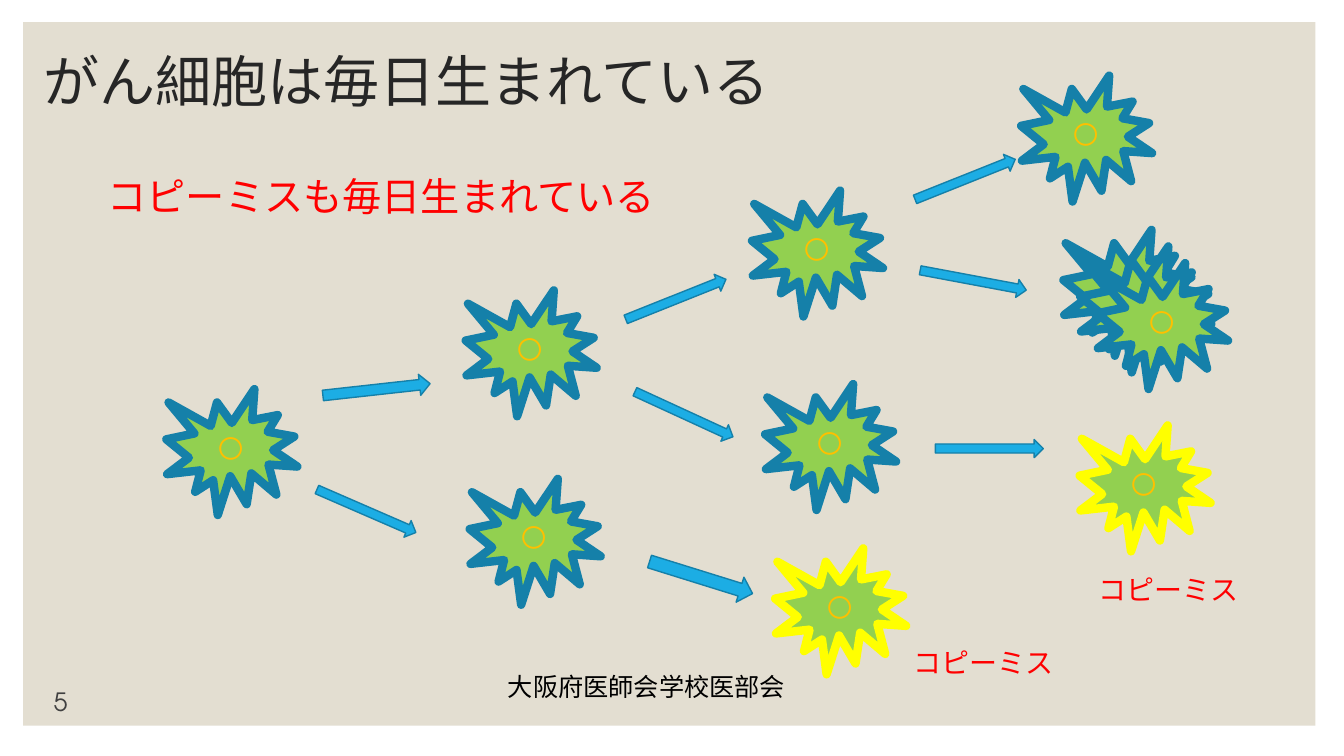
"""Build the slide that shows copy errors arising as cells divide."""
import dataclasses

import pptx
import pptx.dml.color
import pptx.enum.shapes
import pptx.enum.text
import pptx.util

SHAPE = pptx.enum.shapes.MSO_SHAPE
ALIGN = pptx.enum.text.PP_ALIGN
ANCHOR = pptx.enum.text.MSO_ANCHOR
AUTO_SIZE = pptx.enum.text.MSO_AUTO_SIZE

SLIDE_WIDTH, SLIDE_HEIGHT = pptx.util.Inches(13.33), pptx.util.Inches(7.5)
COLUMNS, ROWS = 40, 30
CELL_WIDTH, CELL_HEIGHT = 3.9, 5
ARROW_LENGTH = 3.21
STACK_SIZE, STACK_START, STACK_STEP = 3, (31.65, 9.12), (0.5, 0.66)

HEALTHY_CELLS = [
    (4.95, 15.44),
    (13.86, 11.52), (13.98, 19),
    (22.38, 7.56), (22.77, 15.24),
    (30.39, 3),
]
MISCOPIED_CELLS = [(23.07, 21.76), (32.13, 16.88)]
ARROWS = [
    (9.6, 15.04, 0.84, -6.3), (9.3, 19.92, 0.72, 23.5),
    (18.51, 11.52, 0.72, -21.8), (18.75, 16.08, 0.72, 24.7),
    (19.26, 22.4, 1.04, 17.3),
    (27.12, 6.76, 0.72, -21.8), (27.36, 10.76, 0.72, 10.6),
    (27.84, 17.44, 0.72, 0),
]
MISCOPY_LABELS = [(32.4, 22.52), (26.88, 25.4)]


@dataclasses.dataclass(frozen=True)
class Theme:
    """Colours, type sizes and line widths of the slide."""
    font: str = "TeX Gyre Adventor"
    panel: str = "E3DED1"
    title: str = "262626"
    number: str = "404040"
    text: str = "000000"
    alert: str = "FF0000"
    cell: str = "92D050"
    nucleus: str = "FFC000"
    outline: str = "1580A9"
    miscopy: str = "FFFF00"
    arrow: str = "1CADE4"
    title_size: int = 40
    heading_size: int = 28
    label_size: int = 20
    body_size: int = 18
    cell_line: int = 6
    arrow_line: int = 1


THEME = Theme()


def rgb(value):
    """Return a colour object for a hexadecimal string."""
    return pptx.dml.color.RGBColor.from_string(value)


def grid(left, top, width, height):
    """Turn columns and rows into slide lengths."""
    column, row = SLIDE_WIDTH / COLUMNS, SLIDE_HEIGHT / ROWS
    return [round(length) for length in
            (left * column, top * row, width * column, height * row)]


def write(frame, text, size=THEME.body_size, color=THEME.text,
          align=ALIGN.LEFT, anchor=ANCHOR.TOP, wrap=True, spacing=None):
    """Write one formatted paragraph into a text frame."""
    frame.word_wrap = wrap
    frame.vertical_anchor = anchor
    para = frame.paragraphs[0]
    para.alignment = align
    para.line_spacing = spacing
    span = para.add_run()
    span.text = text
    span.font.name = THEME.font
    span.font.size = pptx.util.Pt(size)
    span.font.color.rgb = rgb(color)


def add_figure(page, kind, place, fill, line=None, line_width=0):
    """Add a flat preset shape with an optional outline."""
    figure = page.shapes.add_shape(kind, *grid(*place))
    figure.shadow.inherit = False
    figure.fill.solid()
    figure.fill.fore_color.rgb = rgb(fill)
    if line:
        figure.line.color.rgb = rgb(line)
        figure.line.width = pptx.util.Pt(line_width)
    else:
        figure.line.fill.background()
    return figure


def add_cell(page, left, top, outline=THEME.outline):
    """Add a spiky cell with its nucleus."""
    cell = add_figure(page, SHAPE.EXPLOSION1, (left, top, CELL_WIDTH, CELL_HEIGHT),
                      THEME.cell, outline, THEME.cell_line)
    write(cell.text_frame, "〇", color=THEME.nucleus,
          align=ALIGN.CENTER, anchor=ANCHOR.MIDDLE)


def add_arrow(page, left, top, thickness, angle):
    """Add a block arrow turned by an angle."""
    arrow = add_figure(page, SHAPE.RIGHT_ARROW, (left, top, ARROW_LENGTH, thickness),
                       THEME.arrow, THEME.outline, THEME.arrow_line)
    arrow.rotation = angle


def add_label(page, place, text, grow=True, **style):
    """Add a text box that may grow with its text."""
    box = page.shapes.add_textbox(*grid(*place))
    write(box.text_frame, text, **style)
    box.text_frame.auto_size = AUTO_SIZE.SHAPE_TO_FIT_TEXT if grow else AUTO_SIZE.NONE


def set_title(page, place, text):
    """Place and format the title in front of the panel."""
    title = page.shapes.title
    title.left, title.top, title.width, title.height = grid(*place)
    write(title.text_frame, text, size=THEME.title_size, color=THEME.title,
          anchor=ANCHOR.MIDDLE, spacing=0.9)
    page.shapes.element.append(title.element)


def main():
    """Build and save the deck."""
    deck = pptx.Presentation()
    deck.slide_width, deck.slide_height = SLIDE_WIDTH, SLIDE_HEIGHT
    page = deck.slides.add_slide(deck.slide_layouts[5])

    add_figure(page, SHAPE.RECTANGLE, (0.69, 0.88, 38.46, 27.92), THEME.panel)
    set_title(page, (0.99, 1.52, 28.47, 3.64), "がん細胞は毎日生まれている")

    stack = [(STACK_START[0] + index * STACK_STEP[0], STACK_START[1] + index * STACK_STEP[1])
             for index in range(STACK_SIZE)]
    for left, top in HEALTHY_CELLS + stack:
        add_cell(page, left, top)
    for arrow in ARROWS:
        add_arrow(page, *arrow)
    for left, top in MISCOPIED_CELLS:
        add_cell(page, left, top, outline=THEME.miscopy)

    for left, top in MISCOPY_LABELS:
        add_label(page, (left, top, 4.8, 1.76), "コピーミス",
                  size=THEME.label_size, color=THEME.alert, wrap=False)
    add_label(page, (2.91, 6.64, 17.1, 2.28), "コピーミスも毎日生まれている",
              size=THEME.heading_size, color=THEME.alert, wrap=False)
    add_label(page, (0.18, 27.44, 2.13, 1.2), "5", grow=False,
              color=THEME.number, align=ALIGN.RIGHT, anchor=ANCHOR.BOTTOM)
    add_label(page, (14.82, 26.44, 9.39, 1.6), "大阪府医師会学校医部会")

    deck.save("out.pptx")


if __name__ == "__main__":
    main()
